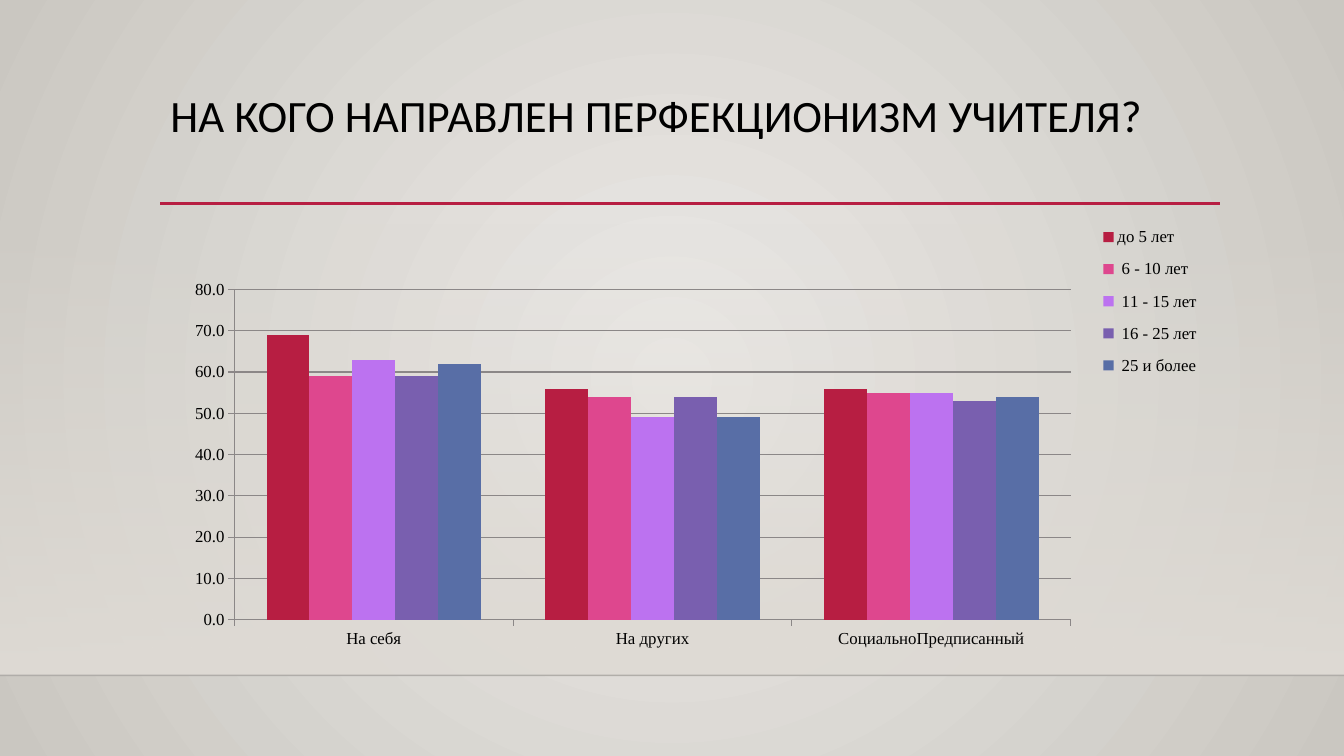
"""Build a slide with a clustered column chart on teachers' perfectionism."""
import lxml.etree
import pptx
import pptx.chart.data
import pptx.dml.color
import pptx.enum.chart
import pptx.enum.shapes
import pptx.enum.text
import pptx.oxml
import pptx.oxml.ns
import pptx.util
from pptx.util import Inches

TITLE = "НА КОГО НАПРАВЛЕН ПЕРФЕКЦИОНИЗМ УЧИТЕЛЯ?"
CATEGORIES = ["На себя", "На других", "СоциальноПредписанный"]
SERIES = [
    ("до 5 лет", (69, 56, 56), "B71E42"),
    (" 6 - 10 лет", (59, 54, 55), "DE478E"),
    (" 11 - 15 лет", (63, 49, 55), "BC72F0"),
    (" 16 - 25 лет", (59, 54, 53), "795FAF"),
    (" 25 и более", (62, 49, 54), "586EA6"),
]
WIDTH, HEIGHT = 13.33, 7.5
LEFT, CONTENT_WIDTH = 1.59, 10.5
RULE_Y, FLOOR_Y = 2.02, 6.7
BAND_TOP = 2.21
PLOT_FRAME = (0.07, 0.18, 0.79, 0.7)
LEGEND_FRAME = (0.87, 0.02, 0.13, 0.37)
GRID_COLOR = "8B8787"


def rgb(code):
    return pptx.dml.color.RGBColor.from_string(code)


def add_child(parent, tag, **attributes):
    child = lxml.etree.SubElement(parent, pptx.oxml.ns.qn(tag))
    for name, value in attributes.items():
        child.set(name, str(value))
    return child


def set_opacity(element, percent):
    color = next(element.iter(pptx.oxml.ns.qn("a:srgbClr")))
    add_child(color, "a:alpha", val=percent * 1000)


def set_gradient(fill, colors):
    fill.gradient()
    for stop, color in zip(fill.gradient_stops, colors):
        stop.color.rgb = rgb(color)


def add_rule(page, left, right, y, color, width):
    line = page.shapes.add_connector(
        pptx.enum.shapes.MSO_CONNECTOR.STRAIGHT,
        Inches(left), Inches(y), Inches(right), Inches(y))
    line.line.color.rgb = rgb(color)
    line.line.width = pptx.util.Pt(width)
    add_child(line._element.spPr, "a:effectLst")
    return line


def set_font(font, name, size):
    font.name = name
    font.size = pptx.util.Pt(size)
    font.color.rgb = rgb("000000")


def set_layout(element, index, frame, inner=False):
    for old in element.findall(pptx.oxml.ns.qn("c:layout")):
        element.remove(old)
    layout = pptx.oxml.parse_xml(f"<c:layout {pptx.oxml.ns.nsdecls('c')}/>")
    manual = add_child(layout, "c:manualLayout")
    if inner:
        add_child(manual, "c:layoutTarget", val="inner")
    for axis in "xy":
        add_child(manual, f"c:{axis}Mode", val="edge")
    for side, value in zip("xywh", frame):
        add_child(manual, f"c:{side}", val=value)
    element.insert(index, layout)


def add_background(page):
    fill = page.background.fill
    set_gradient(fill, ("ECEAE7", "CAC7C1"))
    gradient = next(page._element.iter(pptx.oxml.ns.qn("a:gradFill")))
    for direction in gradient.findall(pptx.oxml.ns.qn("a:lin")):
        gradient.remove(direction)
    circle = add_child(gradient, "a:path", path="circle")
    add_child(circle, "a:fillToRect", l=50000, t=50000, r=50000, b=50000)

    band = page.shapes.add_shape(
        pptx.enum.shapes.MSO_SHAPE.RECTANGLE, 0, Inches(BAND_TOP),
        Inches(WIDTH), Inches(FLOOR_Y - BAND_TOP))
    band.shadow.inherit = False
    band.line.fill.background()
    set_gradient(band.fill, ("DFDBD5", "DFDBD5"))
    band.fill.gradient_angle = 270
    set_opacity(band._element.spPr, 0)

    floor = add_rule(page, 0, WIDTH, FLOOR_Y, "000001", 1)
    set_opacity(floor._element.spPr, 20)
    add_rule(page, LEFT, 12.1, RULE_Y, "B71E42", 2.5)


def add_title(page):
    title = page.shapes.title
    title.left, title.top = Inches(LEFT), Inches(0.88)
    title.width, title.height = Inches(CONTENT_WIDTH), Inches(1.15)
    frame = title.text_frame
    frame.word_wrap = True
    frame.auto_size = pptx.enum.text.MSO_AUTO_SIZE.NONE
    frame.vertical_anchor = pptx.enum.text.MSO_ANCHOR.TOP
    para = frame.paragraphs[0]
    para.text = TITLE
    para.alignment = pptx.enum.text.PP_ALIGN.LEFT
    para.line_spacing = 0.9
    set_font(para.font, "Calibri", 32)


def add_columns(page):
    data = pptx.chart.data.CategoryChartData(number_format="0.0")
    data.categories = CATEGORIES
    for name, values, _ in SERIES:
        data.add_series(name, values)
    chart = page.shapes.add_chart(
        pptx.enum.chart.XL_CHART_TYPE.COLUMN_CLUSTERED,
        Inches(LEFT), Inches(2.03), Inches(CONTENT_WIDTH), Inches(4.68), data).chart
    chart.has_title = False
    set_font(chart.font, "Calibri", 10)

    plot = chart.plots[0]
    plot.gap_width = 150
    plot.overlap = 0
    plot.vary_by_categories = False
    for series, (_, _, color) in zip(plot.series, SERIES):
        series.format.fill.solid()
        series.format.fill.fore_color.rgb = rgb(color)

    values = chart.value_axis
    values.minimum_scale, values.maximum_scale, values.major_unit = 0, 80, 10
    values.has_major_gridlines = True
    values.tick_labels.number_format = "0.0"
    values.tick_labels.number_format_is_linked = False
    lines = [values.major_gridlines.format.line]
    for axis in (chart.category_axis, values):
        axis.major_tick_mark = pptx.enum.chart.XL_TICK_MARK.OUTSIDE
        set_font(axis.tick_labels.font, "Times New Roman", 12)
        lines.append(axis.format.line)
    for line in lines:
        line.color.rgb = rgb(GRID_COLOR)
        line.width = pptx.util.Pt(0.75)

    chart.has_legend = True
    legend = chart.legend
    legend.position = pptx.enum.chart.XL_LEGEND_POSITION.RIGHT
    legend.include_in_layout = False
    set_font(legend.font, "Times New Roman", 12)
    set_layout(legend._element, 1, LEGEND_FRAME)
    set_layout(chart._chartSpace.chart.plotArea, 0, PLOT_FRAME, inner=True)


def main():
    deck = pptx.Presentation()
    deck.slide_width, deck.slide_height = Inches(WIDTH), Inches(HEIGHT)
    page = deck.slides.add_slide(deck.slide_layouts[5])
    add_background(page)
    add_title(page)
    add_columns(page)
    deck.save("out.pptx")


if __name__ == "__main__":
    main()
